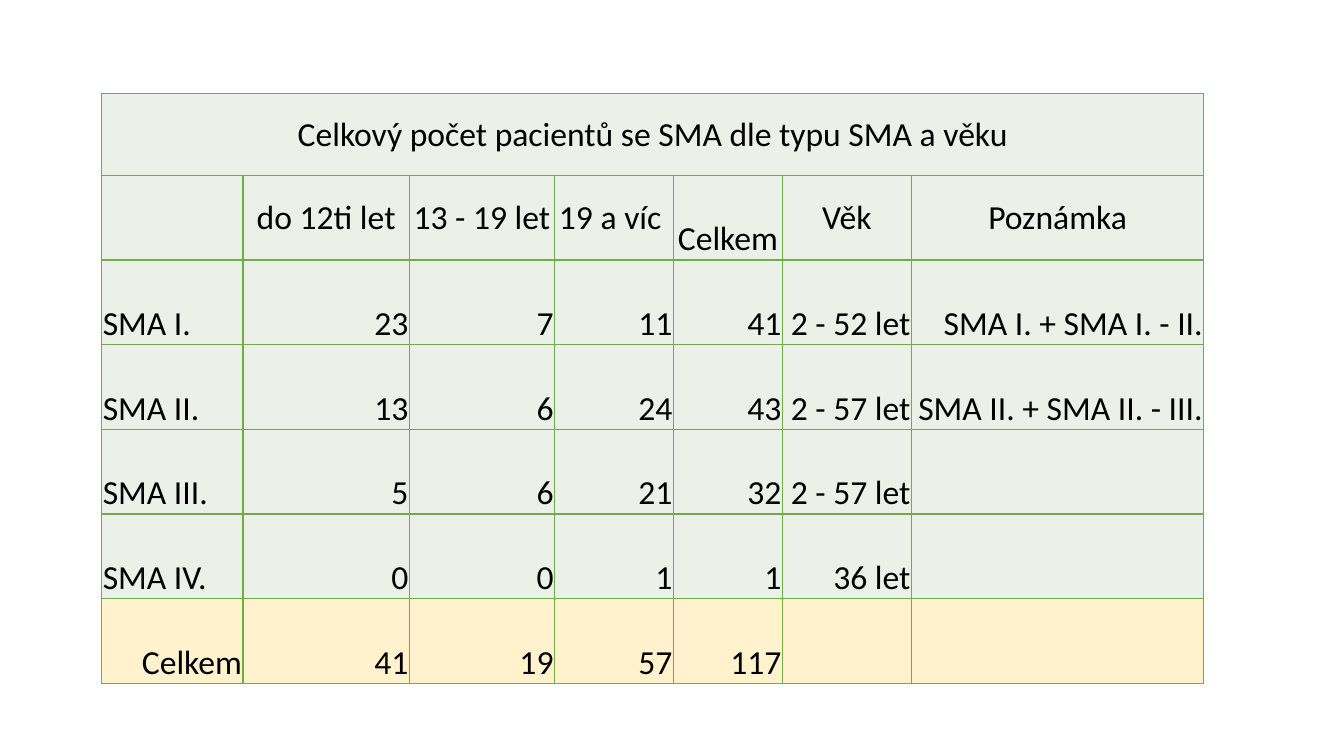
import dataclasses

import lxml.etree
import pptx
import pptx.dml.color
import pptx.enum.text
import pptx.oxml.ns
import pptx.table
import pptx.util

Inches = pptx.util.Inches
ALIGN = pptx.enum.text.PP_ALIGN
ANCHOR = pptx.enum.text.MSO_ANCHOR

COLORS = {"text": "000000", "border": "70AD47", "body": "EBF1E9", "total": "FFF2CC"}
COLUMN_WIDTHS = [1.4, 1.65, 1.44, 1.18, 1.08, 1.28, 2.9]
ROW_HEIGHTS = [0.81] + [0.84] * 6


@dataclasses.dataclass
class Row:
    texts: list[str]
    fill: str = "body"
    first_align: ALIGN = ALIGN.LEFT
    align: ALIGN = ALIGN.RIGHT
    anchor: ANCHOR = ANCHOR.BOTTOM


ROWS = [
    Row(["Celkový počet pacientů se SMA dle typu SMA a věku"] + [""] * 6,
        first_align=ALIGN.CENTER, anchor=ANCHOR.MIDDLE),
    Row(["", "do 12ti let", "13 - 19 let", "19 a víc ", "Celkem", "Věk", "Poznámka"],
        align=ALIGN.CENTER, anchor=ANCHOR.MIDDLE),
    Row(["SMA I.", "23", "7", "11", "41", "2 - 52 let", "SMA I. + SMA I. - II."]),
    Row(["SMA II.", "13", "6", "24", "43", "2 - 57 let", "SMA II. + SMA II. - III."]),
    Row(["SMA III.", "5", "6", "21", "32", "2 - 57 let", ""]),
    Row(["SMA IV. ", "0", "0", "1", "1", "36 let", ""]),
    Row(["Celkem", "41", "19", "57", "117", "", ""], fill="total", first_align=ALIGN.RIGHT),
]


def rgb(name: str) -> pptx.dml.color.RGBColor:
    return pptx.dml.color.RGBColor.from_string(COLORS[name])


def add_borders(cell: pptx.table._Cell) -> None:
    qn = pptx.oxml.ns.qn
    tcPr = cell._tc.get_or_add_tcPr()
    for side in ("lnL", "lnR", "lnT", "lnB"):
        ln = lxml.etree.SubElement(tcPr, qn(f"a:{side}"), w=str(pptx.util.Pt(1)))
        fill = lxml.etree.SubElement(ln, qn("a:solidFill"))
        lxml.etree.SubElement(fill, qn("a:srgbClr"), val=COLORS["border"])


def format_cell(cell: pptx.table._Cell, text: str, row: Row, align: ALIGN) -> None:
    add_borders(cell)
    cell.fill.solid()
    cell.fill.fore_color.rgb = rgb(row.fill)
    cell.margin_left = cell.margin_right = cell.margin_top = Inches(0.01)
    cell.margin_bottom = 0
    cell.vertical_anchor = row.anchor
    p = cell.text_frame.paragraphs[0]
    p.text = text
    p.alignment = align
    p.font.name = "Calibri"
    p.font.size = pptx.util.Pt(24)
    p.font.color.rgb = rgb("text")


def add_patient_table(slide: pptx.slide.Slide) -> None:
    frame = slide.shapes.add_table(
        len(ROWS), len(COLUMN_WIDTHS), Inches(1.01), Inches(0.93),
        Inches(sum(COLUMN_WIDTHS)), Inches(sum(ROW_HEIGHTS)))
    table = frame.table
    table.first_row = table.horz_banding = False
    for column, width in zip(table.columns, COLUMN_WIDTHS):
        column.width = Inches(width)
    for r, (row, height) in enumerate(zip(ROWS, ROW_HEIGHTS)):
        table.rows[r].height = Inches(height)
        for c, text in enumerate(row.texts):
            align = row.first_align if c == 0 else row.align
            format_cell(table.cell(r, c), text, row, align)

    # Title spans the full width; the total heading sits at the bottom
    table.cell(0, 0).merge(table.cell(0, len(COLUMN_WIDTHS) - 1))
    table.cell(1, 4).vertical_anchor = ANCHOR.BOTTOM


def main() -> None:
    prs = pptx.Presentation()
    prs.slide_width, prs.slide_height = Inches(13.33), Inches(7.5)
    slide = prs.slides.add_slide(prs.slide_layouts[6])
    add_patient_table(slide)
    prs.save("out.pptx")


if __name__ == "__main__":
    main()
